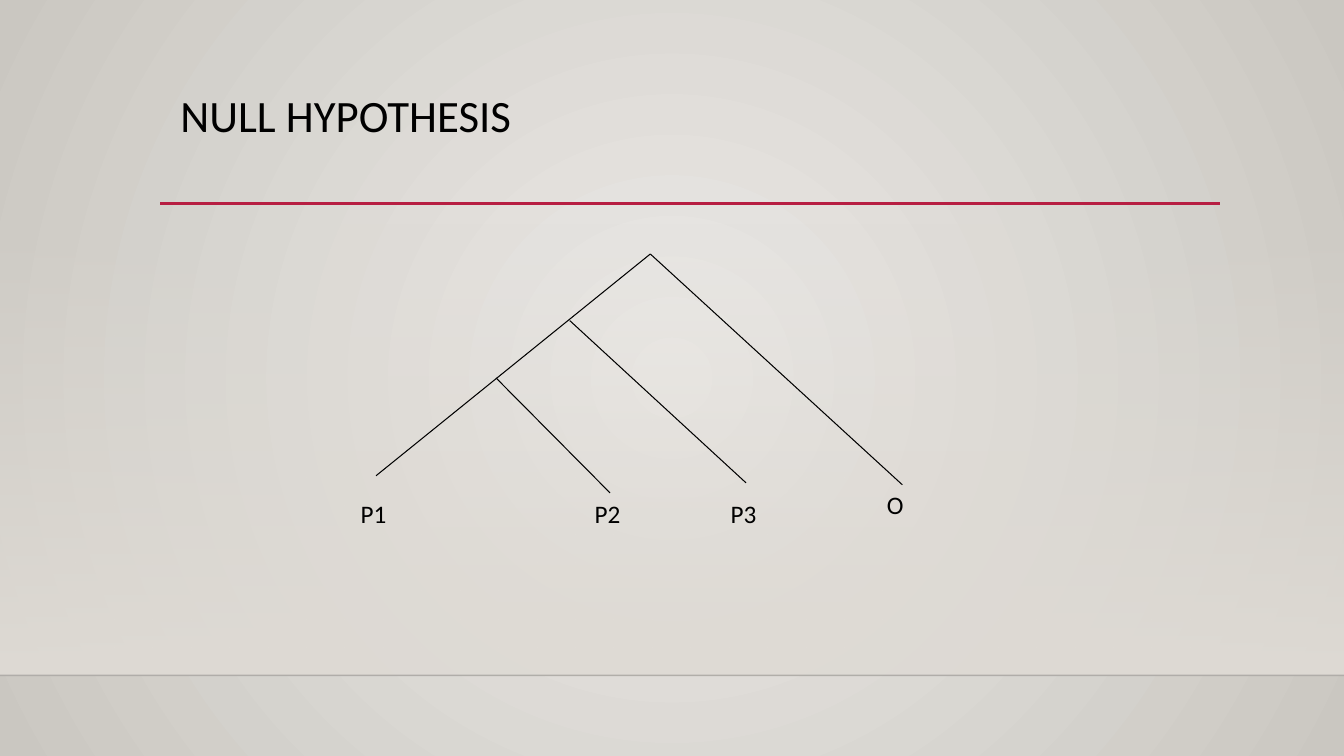
import pptx
import pptx.util
import pptx.oxml
import pptx.oxml.ns
import pptx.dml.color
import pptx.enum.shapes
import pptx.enum.text

WIDTH, HEIGHT = pptx.util.Inches(13.33), pptx.util.Inches(7.5)
FONT = "Calibri"
COLORS = {
    "ink": "000000",
    "rule": "B71E42",
    "glow": "ECEAE7",
    "edge": "CAC7C1",
    "wall": "DFDBD5",
    "floor": "000001",
}
RADIAL = ('<a:path path="circle">'
          '<a:fillToRect l="50000" t="50000" r="50000" b="50000"/></a:path>')
DOWNWARD = '<a:lin ang="5400000" scaled="0"/>'

# Tree geometry, in percent of the slide's width and height
ROOT = (48.39, 33.6)
BRANCHES = [  # start, tip, label, label top
    (ROOT, (27.98, 62.93), "P1", 65.2),
    (ROOT, (67.14, 64.13), "O", 64.13),
    ((42.39, 42.4), (55.51, 63.87), "P3", 65.2),
    ((36.91, 50), (45.39, 65.2), "P2", 65.2),
]
LABEL_SHIFT, LABEL_WIDTH, LABEL_HEIGHT = 1.88, 3.68, 5.33


def x(percent):
    return round(WIDTH * percent / 100)


def y(percent):
    return round(HEIGHT * percent / 100)


def box(left, top, width, height):
    return x(left), y(top), x(width), y(height)


def rgb(name):
    return pptx.dml.color.RGBColor.from_string(COLORS[name])


def set_gradient(parent, stops, direction):
    """Swap the solid fill of parent for a gradient of (percent, color, alpha)."""
    marks = "".join(
        f'<a:gs pos="{pos * 1000}"><a:srgbClr val="{COLORS[color]}">'
        f'<a:alpha val="{alpha * 1000}"/></a:srgbClr></a:gs>'
        for pos, color, alpha in stops)
    gradient = pptx.oxml.parse_xml(
        f'<a:gradFill {pptx.oxml.ns.nsdecls("a")} rotWithShape="1">'
        f'<a:gsLst>{marks}</a:gsLst>{direction}</a:gradFill>')
    solid = parent.find(pptx.oxml.ns.qn("a:solidFill"))
    parent.replace(solid, gradient)


def add_line(s, start, end, color="ink", width=0.75, alpha=100):
    line = s.shapes.add_connector(
        pptx.enum.shapes.MSO_CONNECTOR.STRAIGHT,
        x(start[0]), y(start[1]), x(end[0]), y(end[1]))
    line.line.color.rgb = rgb(color)
    line.line.width = pptx.util.Pt(width)
    props = line.element.spPr
    if alpha < 100:
        tint = props.find(".//" + pptx.oxml.ns.qn("a:srgbClr"))
        tint.append(pptx.oxml.parse_xml(
            f'<a:alpha {pptx.oxml.ns.nsdecls("a")} val="{alpha * 1000}"/>'))
    props.append(pptx.oxml.parse_xml(
        f'<a:effectLst {pptx.oxml.ns.nsdecls("a")}/>'))


def write_text(sp, text, size=18, color="ink", spacing=1.0, margin_left=0.1):
    tf = sp.text_frame
    tf.word_wrap = True
    tf.auto_size = pptx.enum.text.MSO_AUTO_SIZE.NONE
    tf.vertical_anchor = pptx.enum.text.MSO_ANCHOR.TOP
    tf.margin_left = pptx.util.Inches(margin_left)
    p = tf.paragraphs[0]
    p.alignment = pptx.enum.text.PP_ALIGN.LEFT
    p.line_spacing = spacing
    r = p.add_run()
    r.text = text
    r.font.name = FONT
    r.font.size = pptx.util.Pt(size)
    r.font.color.rgb = rgb(color)


def add_backdrop(s):
    s.background.fill.solid()
    set_gradient(s.element.find(".//" + pptx.oxml.ns.qn("p:bgPr")),
                 [(0, "glow", 100), (100, "edge", 100)], RADIAL)
    wall = s.shapes.add_shape(pptx.enum.shapes.MSO_SHAPE.RECTANGLE,
                              *box(0, 29.47, 100, 59.87))
    wall.shadow.inherit = False
    wall.line.fill.background()
    wall.fill.solid()
    set_gradient(wall.element.spPr,
                 [(0, "wall", 0), (100, "wall", 100)], DOWNWARD)
    add_line(s, (0, 89.33), (100, 89.33), "floor", 1, alpha=20)


def add_title(s, text):
    add_line(s, (11.93, 26.93), (90.77, 26.93), "rule", 2.5)
    title = s.shapes.title
    title.left, title.top, title.width, title.height = box(
        11.93, 11.73, 78.77, 15.33)
    write_text(title, text, size=32, spacing=0.9, margin_left=0.2)


def add_tree(s):
    for start, tip, label, top in BRANCHES:
        add_line(s, start, tip)
        sp = s.shapes.add_textbox(
            *box(tip[0] - LABEL_SHIFT, top, LABEL_WIDTH, LABEL_HEIGHT))
        write_text(sp, label)


def main():
    prs = pptx.Presentation()
    prs.slide_width, prs.slide_height = WIDTH, HEIGHT
    s = prs.slides.add_slide(prs.slide_layouts[5])  # title only
    add_backdrop(s)
    add_title(s, "NULL HYPOTHESIS")
    add_tree(s)
    prs.save("out.pptx")


if __name__ == "__main__":
    main()
